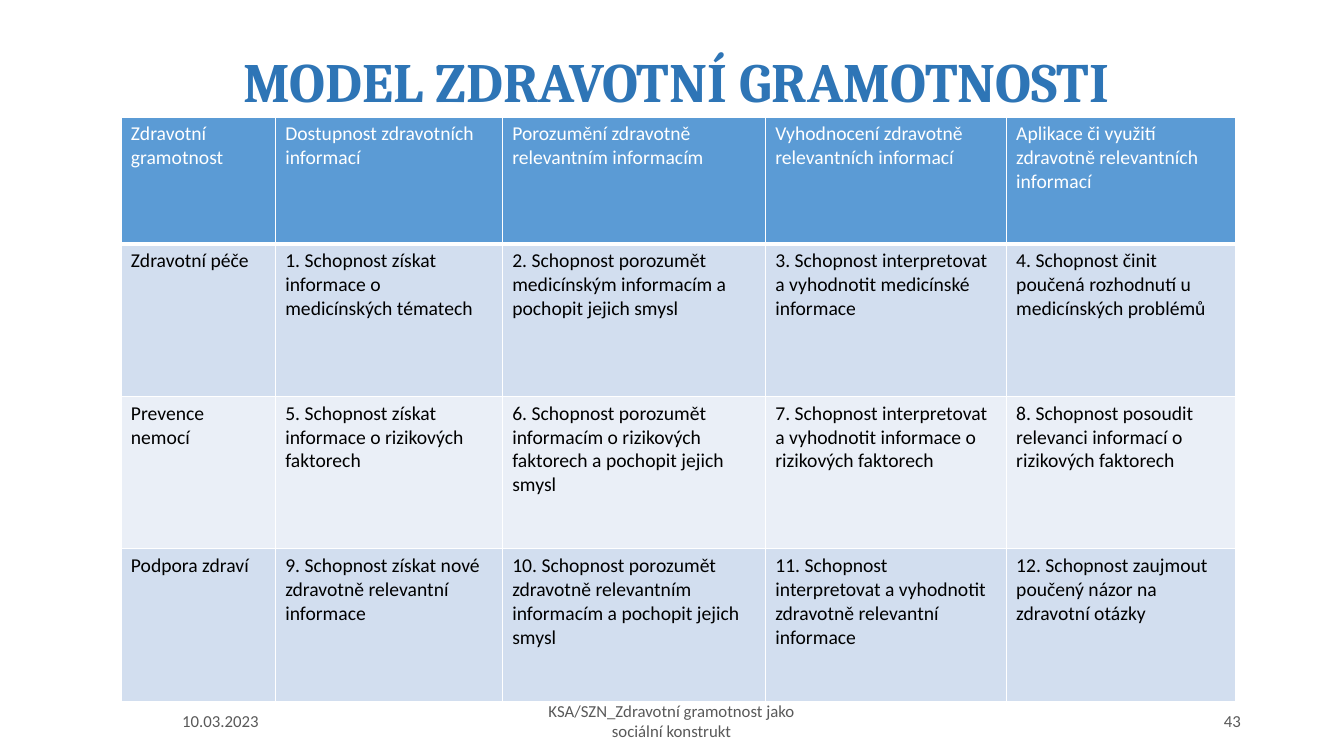
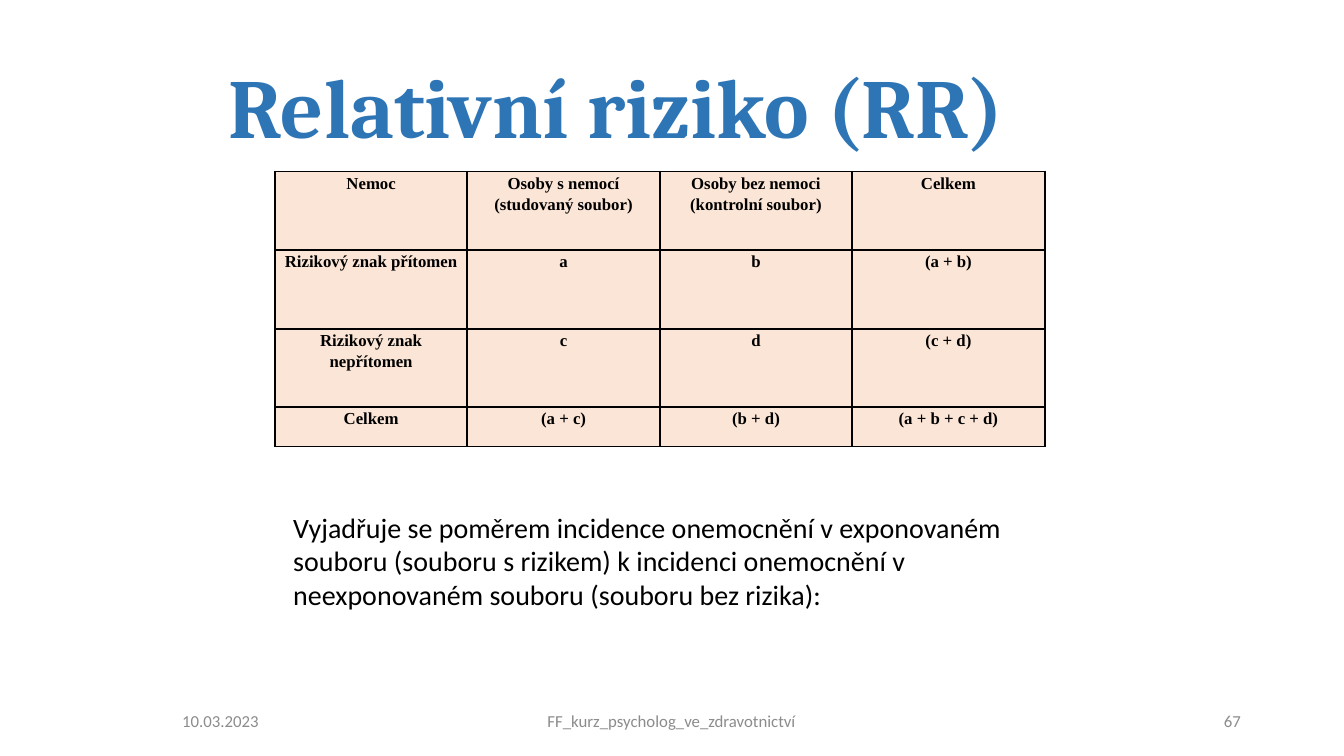
from dataclasses import dataclass

from lxml.etree import SubElement
from pptx import Presentation
from pptx.dml.color import RGBColor
from pptx.enum.text import MSO_ANCHOR, MSO_AUTO_SIZE, PP_ALIGN
from pptx.oxml.ns import qn
from pptx.util import Cm, Pt


def color(value):
    return RGBColor.from_string(value)


@dataclass
class TableStyle:
    font: str
    size: float
    fills: list
    text_colors: list
    border: str
    border_width: float
    margins: tuple
    header_line: float = 0
    bold: bool = False
    alignment: PP_ALIGN = PP_ALIGN.LEFT
    line_spacing: float = 1.0


LITERACY_STYLE = TableStyle(
    font="Calibri", size=14,
    fills=["5B9BD5", "D2DEEF", "EAEFF7", "D2DEEF"],
    text_colors=["FFFFFF"] + ["000000"] * 3,
    border="FFFFFF", border_width=1, header_line=3, margins=(0.25, 0.13))

RISK_STYLE = TableStyle(
    font="Times New Roman", size=12, bold=True,
    fills=["FBE5D6"] * 4, text_colors=["000000"] * 4,
    border="000000", border_width=1.5, margins=(0.18, 0),
    alignment=PP_ALIGN.CENTER, line_spacing=1.15)

LITERACY_ROWS = [
    ["Zdravotní gramotnost",
     "Dostupnost zdravotních informací",
     "Porozumění zdravotně relevantním informacím",
     "Vyhodnocení zdravotně relevantních informací",
     "Aplikace či využití zdravotně relevantních informací"],
    ["Zdravotní péče",
     "1. Schopnost získat informace o medicínských tématech",
     "2. Schopnost porozumět medicínským informacím a pochopit jejich smysl",
     "3. Schopnost interpretovat a vyhodnotit medicínské informace",
     "4. Schopnost činit poučená rozhodnutí u medicínských problémů"],
    ["Prevence nemocí",
     "5. Schopnost získat informace o rizikových faktorech",
     "6. Schopnost porozumět informacím o rizikových faktorech a pochopit jejich smysl",
     "7. Schopnost interpretovat a vyhodnotit informace o rizikových faktorech",
     "8. Schopnost posoudit relevanci informací o rizikových faktorech"],
    ["Podpora zdraví",
     "9. Schopnost získat nové zdravotně relevantní informace",
     "10. Schopnost porozumět zdravotně relevantním informacím a pochopit jejich smysl",
     "11. Schopnost interpretovat a vyhodnotit zdravotně relevantní informace",
     "12. Schopnost zaujmout poučený názor na zdravotní otázky"],
]

RISK_ROWS = [
    ["Nemoc", "Osoby s nemocí (studovaný soubor)",
     "Osoby bez nemoci (kontrolní soubor)", "Celkem"],
    ["Rizikový znak přítomen", "a", "b", "(a + b)"],
    ["Rizikový znak nepřítomen", "c", "d", "(c + d)"],
    ["Celkem", "(a + c)", "(b + d)", "(a + b + c + d)"],
]


class Deck:
    """Holds the shared style and the current slide, and adds elements to it."""

    title_font = "Cambria"
    body_font = "Calibri"
    title_color = "2E75B6"
    text_color = "000000"
    date = "10.03.2023"
    footer_top, footer_height = 17.65, 1.02

    def __init__(self):
        self.presentation = Presentation()
        self.presentation.slide_width = Cm(33.87)
        self.presentation.slide_height = Cm(19.05)
        self.slide = None

    def add_slide(self, title, box, size, alignment):
        layout = self.presentation.slide_layouts[5]
        self.slide = self.presentation.slides.add_slide(layout)
        shape = self.slide.shapes.title
        shape.left, shape.top, shape.width, shape.height = map(Cm, box)
        self.set_text(shape.text_frame, title, self.title_font, size,
                      self.title_color, alignment, MSO_ANCHOR.MIDDLE, bold=True)

    def set_text(self, frame, text, font, size, text_color,
                 alignment=PP_ALIGN.LEFT, anchor=MSO_ANCHOR.TOP, bold=False):
        frame.text = text
        frame.word_wrap = True
        frame.auto_size = MSO_AUTO_SIZE.NONE
        frame.vertical_anchor = anchor
        self.style_paragraph(frame.paragraphs[0], font, size, text_color, alignment, bold)

    def style_paragraph(self, paragraph, font, size, text_color, alignment, bold):
        paragraph.alignment = alignment
        paragraph.font.name = font
        paragraph.font.size = Pt(size)
        paragraph.font.bold = bold
        paragraph.font.color.rgb = color(text_color)

    def add_text(self, text, box, size, text_color=text_color, **options):
        shape = self.slide.shapes.add_textbox(*map(Cm, box))
        self.set_text(shape.text_frame, text, self.body_font, size, text_color, **options)

    def add_footer(self, text, number, text_color):
        parts = [(self.date, 4.34, 7.09, PP_ALIGN.LEFT),
                 (text, 12.9, 8.05, PP_ALIGN.CENTER),
                 (number, 22.43, 9.09, PP_ALIGN.RIGHT)]
        for content, left, width, alignment in parts:
            self.add_text(content, (left, self.footer_top, width, self.footer_height),
                          12, text_color, alignment=alignment, anchor=MSO_ANCHOR.MIDDLE)

    def add_table(self, rows, left, top, widths, heights, style):
        frame = self.slide.shapes.add_table(
            len(rows), len(widths), Cm(left), Cm(top), Cm(sum(widths)), Cm(sum(heights)))
        table = frame.table
        table.first_row = table.horz_banding = False
        for column, width in zip(table.columns, widths):
            column.width = Cm(width)
        for row, height in zip(table.rows, heights):
            row.height = Cm(height)
        for row_index, texts in enumerate(rows):
            for column_index, text in enumerate(texts):
                self.fill_cell(table.cell(row_index, column_index), text, row_index, style)

    def fill_cell(self, cell, text, row_index, style):
        cell.text = text
        horizontal, vertical = map(Cm, style.margins)
        cell.margin_left = cell.margin_right = horizontal
        cell.margin_top = cell.margin_bottom = vertical
        paragraph = cell.text_frame.paragraphs[0]
        paragraph.line_spacing = style.line_spacing
        self.style_paragraph(paragraph, style.font, style.size,
                             style.text_colors[row_index], style.alignment, style.bold)
        for side in ("L", "R", "T", "B"):
            under_header = side == "B" and row_index == 0 and style.header_line
            self.add_border(cell, side, style.border,
                            style.header_line if under_header else style.border_width)
        cell.fill.solid()
        cell.fill.fore_color.rgb = color(style.fills[row_index])

    def add_border(self, cell, side, border_color, width):
        properties = cell._tc.get_or_add_tcPr()
        line = SubElement(properties, qn(f"a:ln{side}"), w=str(Pt(width)))
        fill = SubElement(line, qn("a:solidFill"))
        SubElement(fill, qn("a:srgbClr"), val=border_color)


def main():
    deck = Deck()

    deck.add_slide("MODEL ZDRAVOTNÍ GRAMOTNOSTI", (3.84, 1.12, 26.39, 1.83),
                   39.6, PP_ALIGN.CENTER)
    deck.add_table(LITERACY_ROWS, 3.05, 2.95, [3.89, 5.72, 6.63, 6.07, 5.79],
                   [3.2] + [3.84] * 3, LITERACY_STYLE)
    deck.add_footer("KSA/SZN_Zdravotní gramotnost jako sociální konstrukt", "43", "595959")

    deck.add_slide("Relativní riziko (RR)", (5.51, 0.76, 22.86, 3.76), 60, PP_ALIGN.LEFT)
    deck.add_table(RISK_ROWS, 6.93, 4.32, [4.85] * 4, [1.98] * 3 + [0.99], RISK_STYLE)
    deck.add_footer("FF_kurz_psycholog_ve_zdravotnictví", "67", "8C8C8C")
    deck.add_text("Vyjadřuje se poměrem incidence onemocnění v exponovaném souboru "
                  "(souboru s rizikem) k incidenci onemocnění v neexponovaném souboru "
                  "(souboru bez rizika):", (7.14, 12.73, 19.41, 2.82), 20)

    deck.presentation.save("out.pptx")


if __name__ == "__main__":
    main()
